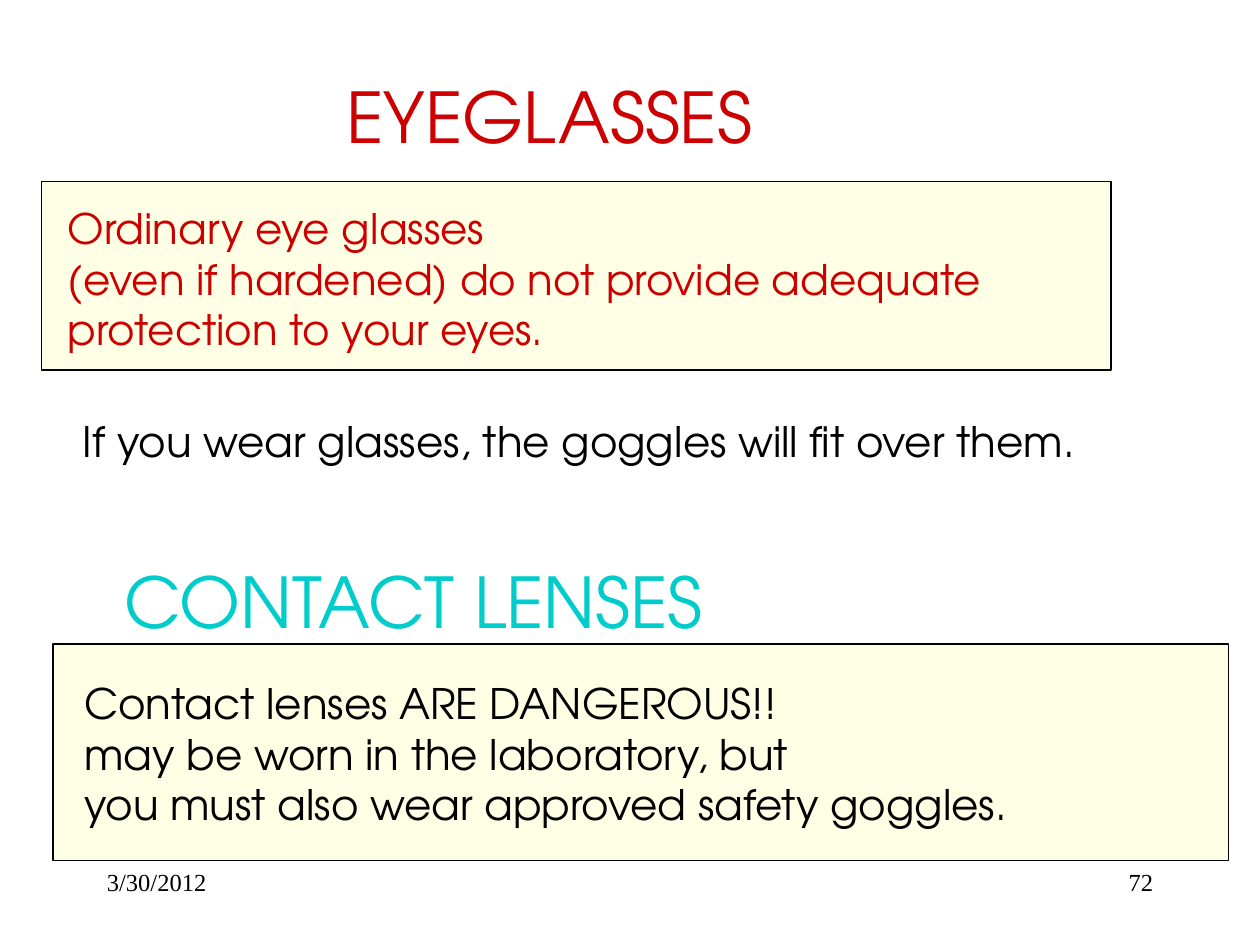
"""Build the slide on eyeglasses and contact lenses."""
from dataclasses import dataclass

from lxml.etree import SubElement
from pptx import Presentation
from pptx.dml.color import RGBColor
from pptx.enum.shapes import MSO_SHAPE
from pptx.enum.text import MSO_ANCHOR, MSO_AUTO_SIZE, PP_ALIGN
from pptx.oxml.ns import qn
from pptx.util import Emu, Pt

SCALE = 9144
SANS = "TeX Gyre Adventor"
SERIF = "Times New Roman"
HUES = {"ink": "000000", "red": "CC0000", "aqua": "00CCCC", "cream": "FFFFCC"}


@dataclass(frozen=True)
class Box:
    """Hold a place in px."""
    left: int
    top: int
    width: int
    height: int

    def emu(self) -> list[Emu]:
        """Give the place in EMU."""
        return [Emu(n * SCALE) for n in (self.left, self.top, self.width, self.height)]


@dataclass(frozen=True)
class Note:
    """Hold a text with its place and look."""
    box: Box
    lines: tuple[str, ...]
    hue: str = "ink"
    size: int = 24
    font: str = SANS
    wrap: bool = True
    align: PP_ALIGN = PP_ALIGN.LEFT


TITLE = Note(Box(265, 53, 395, 77), ("EYEGLASSES",), "red", 40, wrap=False)
PANELS = (Box(42, 511, 933, 172), Box(33, 144, 849, 150))
NOTES = (
    Note(Box(75, 683, 208, 50), ("3/30/2012",), size=14, font=SERIF),
    Note(Box(717, 683, 208, 50), ("72",), size=14, font=SERIF, align=PP_ALIGN.RIGHT),
    Note(Box(89, 438, 536, 77), ("CONTACT LENSES",), "aqua", 40, wrap=False),
    Note(Box(57, 533, 902, 131), (
        "Contact lenses ARE DANGEROUS!!",
        "may be worn in the laboratory, but",
        "you must also wear approved safety goggles.",
    )),
    Note(Box(44, 156, 821, 131), (
        "Ordinary eye glasses",
        "(even if hardened) do not provide adequate protection to your eyes.",
    ), "red"),
    Note(Box(56, 325, 844, 51), ("If you wear glasses, the goggles will fit over them.",)),
)


def color(hue: str) -> RGBColor:
    """Look up a named colour."""
    return RGBColor.from_string(HUES[hue])


def draw_panel(slide, box: Box) -> None:
    """Draw a half-clear cream panel."""
    panel = slide.shapes.add_shape(MSO_SHAPE.RECTANGLE, *box.emu())
    panel.shadow.inherit = False
    panel.fill.solid()
    panel.fill.fore_color.rgb = color("cream")
    tint = panel.fill._xPr.find(qn("a:solidFill"))[0]
    SubElement(tint, qn("a:alpha"), val="50000")
    panel.line.color.rgb = color("ink")
    panel.line.width = Pt(1)


def fill_text(shape, note: Note) -> None:
    """Place a shape and write its text."""
    shape.left, shape.top, shape.width, shape.height = note.box.emu()
    frame = shape.text_frame
    frame.auto_size = MSO_AUTO_SIZE.NONE
    frame.word_wrap = note.wrap
    frame.vertical_anchor = MSO_ANCHOR.TOP
    for i, line in enumerate(note.lines):
        para = frame.add_paragraph() if i else frame.paragraphs[0]
        para.alignment = note.align
        run = para.add_run()
        run.text = line
        run.font.name = note.font
        run.font.size = Pt(note.size)
        run.font.color.rgb = color(note.hue)


def main() -> None:
    """Build and save the slide."""
    deck = Presentation()
    deck.slide_width, deck.slide_height = Emu(1000 * SCALE), Emu(750 * SCALE)
    slide = deck.slides.add_slide(deck.slide_layouts.get_by_name("Title Only"))
    fill_text(slide.shapes.title, TITLE)
    for box in PANELS:
        draw_panel(slide, box)
    for note in NOTES:
        fill_text(slide.shapes.add_textbox(*note.box.emu()), note)
    deck.save("out.pptx")


if __name__ == "__main__":
    main()
